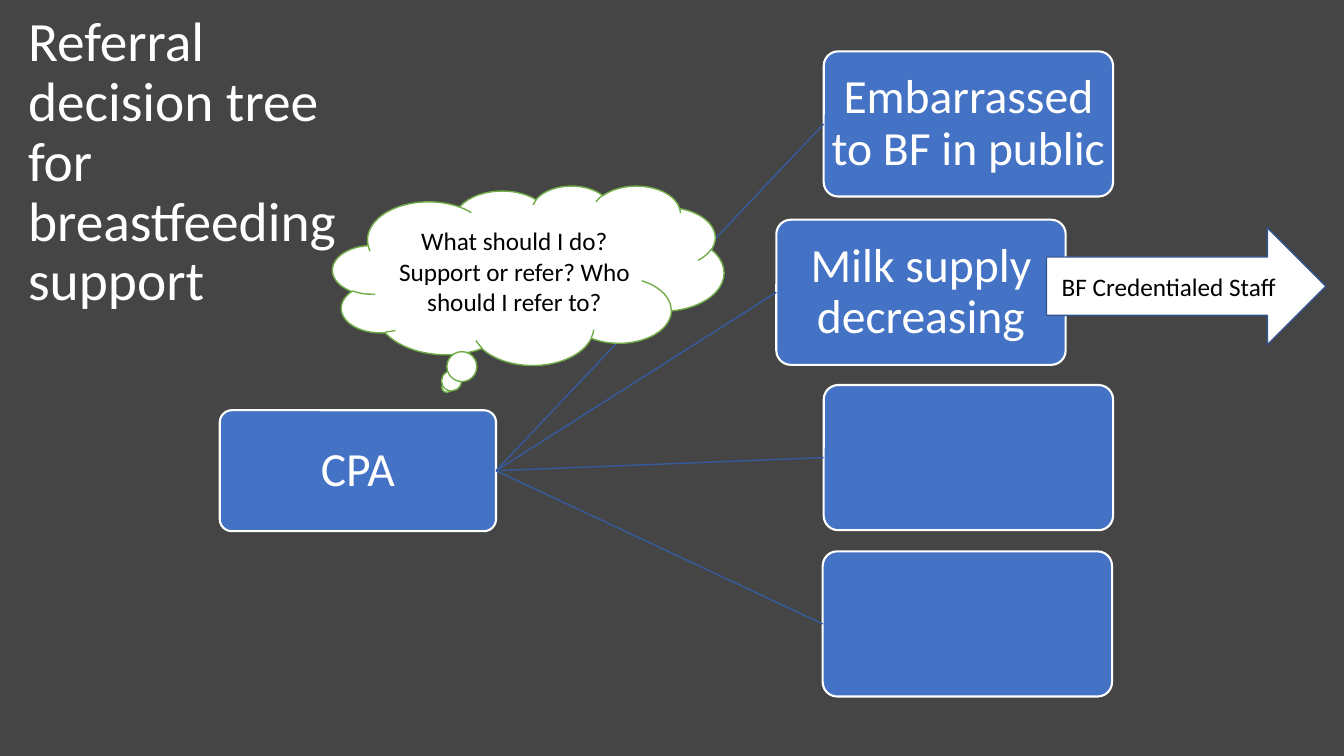
from dataclasses import dataclass

from lxml.etree import SubElement
from pptx import Presentation
from pptx.dml.color import RGBColor
from pptx.enum.shapes import MSO_CONNECTOR, MSO_SHAPE
from pptx.enum.text import MSO_ANCHOR, PP_ALIGN
from pptx.oxml.ns import qn
from pptx.util import Inches, Pt


@dataclass(frozen=True)
class Theme:
    font: str = "Calibri"
    background: str = "454545"
    white: str = "FFFFFF"
    black: str = "000000"
    blue: str = "4472C4"
    branch: str = "365B9D"
    arrow_edge: str = "325491"
    green: str = "70AD47"
    title_size: float = 39.6
    box_size: float = 34
    note_size: float = 18


THEME = Theme()
LEFT_SITE, RIGHT_SITE = 1, 3
TOPIC_SIZE = (2.87, 1.44)
TOPICS = [
    (8.17, 0.51, "Embarrassed to BF in public"),
    (7.7, 2.18, "Milk supply decreasing"),
    (8.17, 3.82, ""),
    (8.16, 5.47, ""),
]


def color(value):
    return RGBColor.from_string(value)


def write(shape, lines, size, ink, align=PP_ALIGN.CENTER, spacing=1.0):
    frame = shape.text_frame
    frame.word_wrap = True
    frame.vertical_anchor = MSO_ANCHOR.MIDDLE
    for index, line in enumerate(lines):
        para = frame.add_paragraph() if index else frame.paragraphs[0]
        para.alignment = align
        para.line_spacing = spacing
        span = para.add_run()
        span.text = line
        span.font.name = THEME.font
        span.font.size = Pt(size)
        span.font.color.rgb = color(ink)


def add_title(page, text, left, top, width, height):
    box = page.shapes.add_textbox(*map(Inches, (left, top, width, height)))
    write(box, [text], THEME.title_size, THEME.white, PP_ALIGN.LEFT, 0.9)


def add_figure(page, kind, place, fill, edge, weight=1.0):
    shape = page.shapes.add_shape(kind, *map(Inches, place))
    shape.shadow.inherit = False
    shape.fill.solid()
    shape.fill.fore_color.rgb = color(fill)
    shape.line.color.rgb = color(edge)
    shape.line.width = Pt(weight)
    return shape


def add_box(page, place, text):
    box = add_figure(page, MSO_SHAPE.ROUNDED_RECTANGLE, place, THEME.blue, THEME.white, 1.5)
    box.adjustments[0] = 0.1
    frame = box.text_frame
    frame.margin_left = frame.margin_right = Inches(0.02)
    frame.margin_top = frame.margin_bottom = Inches(0.02)
    if text:
        write(box, [text], THEME.box_size, THEME.white, spacing=0.9)
    return box


def add_branch(page, parent, child):
    branch = page.shapes.add_connector(MSO_CONNECTOR.STRAIGHT, 0, 0, 0, 0)
    branch.begin_connect(parent, RIGHT_SITE)
    branch.end_connect(child, LEFT_SITE)
    branch.line.color.rgb = color(THEME.branch)
    branch.line.width = Pt(1)
    SubElement(branch._element.spPr, qn("a:effectLst"))


def add_note(page, kind, place, edge, lines):
    note = add_figure(page, kind, place, THEME.white, edge)
    write(note, lines, THEME.note_size, THEME.black)


def main():
    deck = Presentation()
    deck.slide_width, deck.slide_height = Inches(13.33), Inches(7.5)
    page = deck.slides.add_slide(deck.slide_layouts[6])
    page.background.fill.solid()
    page.background.fill.fore_color.rgb = color(THEME.background)

    add_title(page, "Referral decision tree for breastfeeding support", 0.18, 0.4, 3.63, 2.44)
    root = add_box(page, (2.18, 4.07, 2.74, 1.2), "CPA")
    for left, top, text in TOPICS:
        topic = add_box(page, (left, top, *TOPIC_SIZE), text)
        add_branch(page, root, topic)

    add_note(page, MSO_SHAPE.CLOUD_CALLOUT, (3.3, 1.84, 3.88, 1.78), THEME.green,
             ["What should I do?", "Support or refer? Who should I refer to?"])
    add_note(page, MSO_SHAPE.RIGHT_ARROW, (10.38, 2.26, 2.77, 1.16), THEME.arrow_edge,
             ["BF Credentialed Staff "])
    deck.save("out.pptx")


if __name__ == "__main__":
    main()
